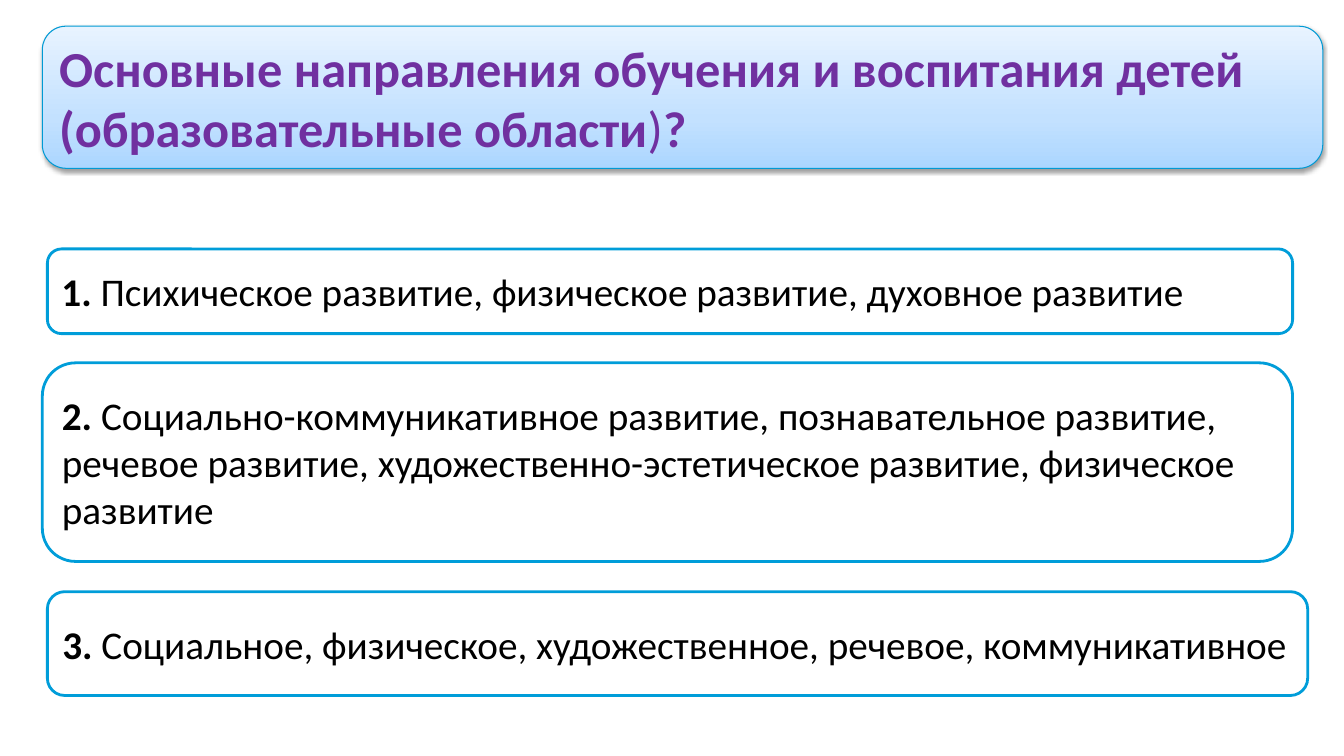
from lxml import etree
from pptx import Presentation
from pptx.dml.color import RGBColor
from pptx.enum.shapes import MSO_SHAPE
from pptx.enum.text import MSO_ANCHOR, PP_ALIGN
from pptx.oxml.ns import qn
from pptx.util import Inches, Pt

ROUNDED = MSO_SHAPE.FLOWCHART_ALTERNATE_PROCESS
MIDDLE = MSO_ANCHOR.MIDDLE
LEFT = PP_ALIGN.LEFT

QUESTION = {
    "box": (0.42, 0.26, 12.7, 1.41),
    "runs": [
        ("Основные направления обучения и воспитания детей (образовательные области", True),
        (")", False),
        ("?", True),
    ],
}
ANSWERS = [
    ((0.47, 2.47, 12.35, 0.84),
     "Психическое развитие, физическое развитие, духовное развитие"),
    ((0.42, 3.6, 12.4, 1.97),
     "Социально-коммуникативное развитие, познавательное развитие, речевое развитие, "
     "художественно-эстетическое развитие, физическое развитие"),
    ((0.47, 5.87, 12.5, 1.03),
     "Социальное, физическое, художественное, речевое, коммуникативное"),
]
QUESTION_FONT = {"name": "Calibri", "size": Pt(36)}
ANSWER_FONT = {"name": "Calibri", "size": Pt(28)}
GRADIENT = [(0, "ABD6FF"), (35, "C3E1FF"), (100, "E8F3FF")]
SHADOW = {"blurRad": Pt(3.1), "dist": Pt(1.6), "dir": 90 * 60000, "rotWithShape": 0}


def color(value):
    return RGBColor.from_string(value)


def add_child(parent, tag, **attributes):
    child = etree.SubElement(parent, qn(tag))
    for name, value in attributes.items():
        child.set(name, str(int(value)) if not isinstance(value, str) else value)
    return child


def add_box(slide, box, runs, font_format, font_color, line_color, line_width):
    shape = slide.shapes.add_shape(ROUNDED, *map(Inches, box))
    shape.shadow.inherit = False
    shape.fill.solid()
    shape.fill.fore_color.rgb = color("FFFFFF")
    shape.line.color.rgb = color(line_color)
    shape.line.width = Pt(line_width)
    frame = shape.text_frame
    frame.word_wrap = True
    frame.vertical_anchor = MIDDLE
    paragraph = frame.paragraphs[0]
    paragraph.alignment = LEFT
    for text, bold in runs:
        run = paragraph.add_run()
        run.text = text
        for name, value in {**font_format, "bold": bold}.items():
            setattr(run.font, name, value)
        run.font.color.rgb = color(font_color)
    return shape


def add_gradient(shape):
    shape.fill.gradient()
    shape.fill.gradient_angle = 90
    stops = shape.element.spPr.find(qn("a:gradFill")).find(qn("a:gsLst"))
    for stop in list(stops):
        stops.remove(stop)
    for position, value in GRADIENT:
        stop = add_child(stops, "a:gs", pos=position * 1000)
        add_child(stop, "a:srgbClr", val=value)


def add_shadow(shape):
    effects = shape.element.spPr.find(qn("a:effectLst"))
    shadow = add_child(effects, "a:outerShdw", **SHADOW)
    shade = add_child(shadow, "a:srgbClr", val="000000")
    add_child(shade, "a:alpha", val=38000)


def main():
    """Build the quiz slide with one question and three numbered answers."""
    presentation = Presentation()
    presentation.slide_width = Inches(13.33)
    presentation.slide_height = Inches(7.5)
    slide = presentation.slides.add_slide(presentation.slide_layouts[6])

    question = add_box(slide, QUESTION["box"], QUESTION["runs"],
                       QUESTION_FONT, "7030A0", "009AD4", 0.75)
    add_gradient(question)
    add_shadow(question)
    for number, (box, text) in enumerate(ANSWERS, 1):
        add_box(slide, box, [(f"{number}. ", True), (text, False)],
                ANSWER_FONT, "000000", "009DD9", 2)

    presentation.save("out.pptx")


if __name__ == "__main__":
    main()
